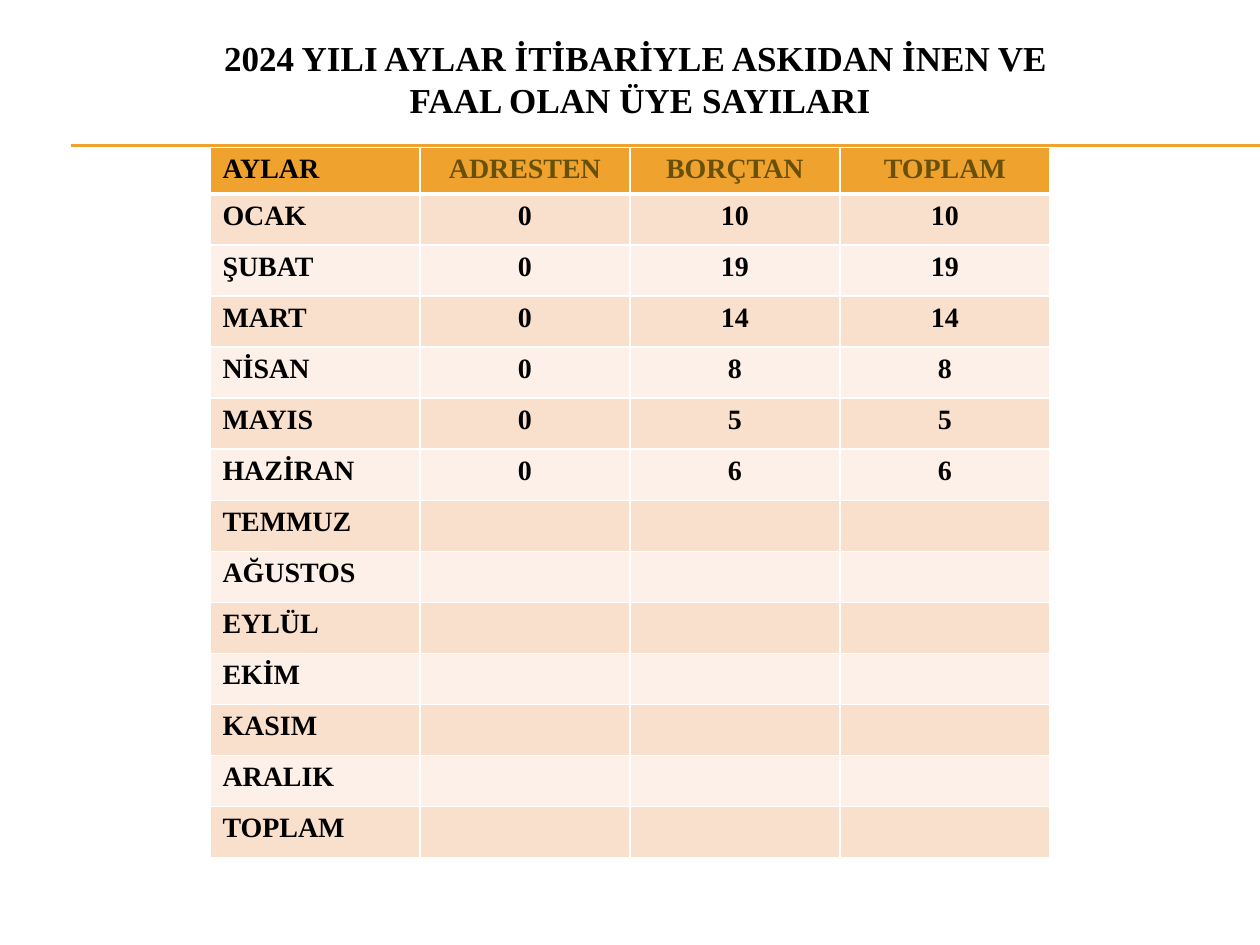
from dataclasses import dataclass

from lxml.etree import SubElement
from pptx import Presentation
from pptx.dml.color import RGBColor as Rgb
from pptx.enum.shapes import MSO_CONNECTOR as Connector
from pptx.enum.text import MSO_ANCHOR as Anchor, PP_ALIGN as Align
from pptx.oxml.ns import qn
from pptx.util import Inches, Pt


@dataclass(frozen=True)
class Theme:
    """Colours, font and type sizes of the slide."""
    font: str = "Times New Roman"
    ink: str = "000000"
    accent: str = "F0A22E"
    heading: str = "695008"
    bands: tuple = ("F9E0CD", "FCF0E8")
    grid: str = "FFFFFF"
    title_size: int = 20
    table_size: int = 16


THEME = Theme()
WIDTH, HEIGHT = 10, 7.5
TITLE = "2024 YILI AYLAR İTİBARİYLE ASKIDAN İNEN VE \vFAAL OLAN ÜYE SAYILARI"
HEADINGS = ("AYLAR", "ADRESTEN", "BORÇTAN", "TOPLAM")
MONTHS = ("OCAK", "ŞUBAT", "MART", "NİSAN", "MAYIS", "HAZİRAN", "TEMMUZ",
          "AĞUSTOS", "EYLÜL", "EKİM", "KASIM", "ARALIK")
FROM_ADDRESS = (0,) * 6
FROM_DEBT = (10, 19, 14, 8, 5, 6)


def table_rows():
    """Return the heading row, the month rows and the total row."""
    counts = [(a, d, a + d) for a, d in zip(FROM_ADDRESS, FROM_DEBT)]
    counts += [("",) * 3] * (len(MONTHS) + 1 - len(counts))
    return [HEADINGS] + [(label, *row) for label, row in zip((*MONTHS, "TOPLAM"), counts)]


def style_paragraph(paragraph, size, color, align):
    """Set the bold type, colour and alignment of a paragraph."""
    paragraph.alignment = align
    font = paragraph.font
    font.name, font.size, font.bold = THEME.font, Pt(size), True
    font.color.rgb = Rgb.from_string(color)


def add_rule(slide, y):
    """Draw a thin accent line from the left margin to the slide's edge."""
    rule = slide.shapes.add_connector(
        Connector.STRAIGHT, Inches(0.56), Inches(y), Inches(WIDTH), Inches(y))
    rule.line.color.rgb = Rgb.from_string(THEME.accent)
    rule.line.width = Pt(0.75)
    SubElement(rule._element.spPr, qn("a:effectLst"))


def set_title(slide):
    """Place and format the title."""
    title = slide.shapes.title
    title.left, title.top = Inches(0.33), Inches(0.16)
    title.width, title.height = Inches(9.5), Inches(0.92)
    frame = title.text_frame
    frame.text, frame.vertical_anchor = TITLE, Anchor.MIDDLE
    style_paragraph(frame.paragraphs[0], THEME.title_size, THEME.ink, Align.CENTER)


def set_borders(cell, **widths):
    """Draw grid lines on the sides L, R, T and B of a cell."""
    properties = cell._tc.get_or_add_tcPr()
    for side, width in widths.items():
        line = SubElement(properties, qn(f"a:ln{side}"), w=str(Pt(width)))
        fill = SubElement(line, qn("a:solidFill"))
        SubElement(fill, qn("a:srgbClr"), val=THEME.grid)


def fill_cell(cell, value, row, column):
    """Write a value and format its cell by row and column."""
    is_heading = row == 0
    cell.text = str(value)
    color = THEME.heading if is_heading and column else THEME.ink
    style_paragraph(cell.text_frame.paragraphs[0], THEME.table_size, color,
                    Align.CENTER if column else Align.LEFT)
    set_borders(cell, L=1, R=1, T=3 if row == 1 else 1, B=3 if is_heading else 1)
    cell.fill.solid()
    band = THEME.accent if is_heading else THEME.bands[(row - 1) % 2]
    cell.fill.fore_color.rgb = Rgb.from_string(band)


def add_member_table(slide):
    """Add the table of members by month, two thirds of the slide wide."""
    rows = table_rows()
    width, heading_height, height = WIDTH * 2 / 3, 0.37, 5.64
    members = slide.shapes.add_table(
        len(rows), len(HEADINGS), Inches((WIDTH - width) / 2), Inches(1.17),
        Inches(width), Inches(height)).table
    row_height = (height - heading_height) / (len(rows) - 1)
    for r, values in enumerate(rows):
        members.rows[r].height = Inches(row_height if r else heading_height)
        for c, value in enumerate(values):
            fill_cell(members.cell(r, c), value, r, c)


def main():
    """Build and save the slide."""
    deck = Presentation()
    deck.slide_width, deck.slide_height = Inches(WIDTH), Inches(HEIGHT)
    slide = deck.slides.add_slide(deck.slide_layouts[5])
    for y in (1.15, 1.16):
        add_rule(slide, y)
    set_title(slide)
    add_member_table(slide)
    deck.save("out.pptx")


if __name__ == "__main__":
    main()
